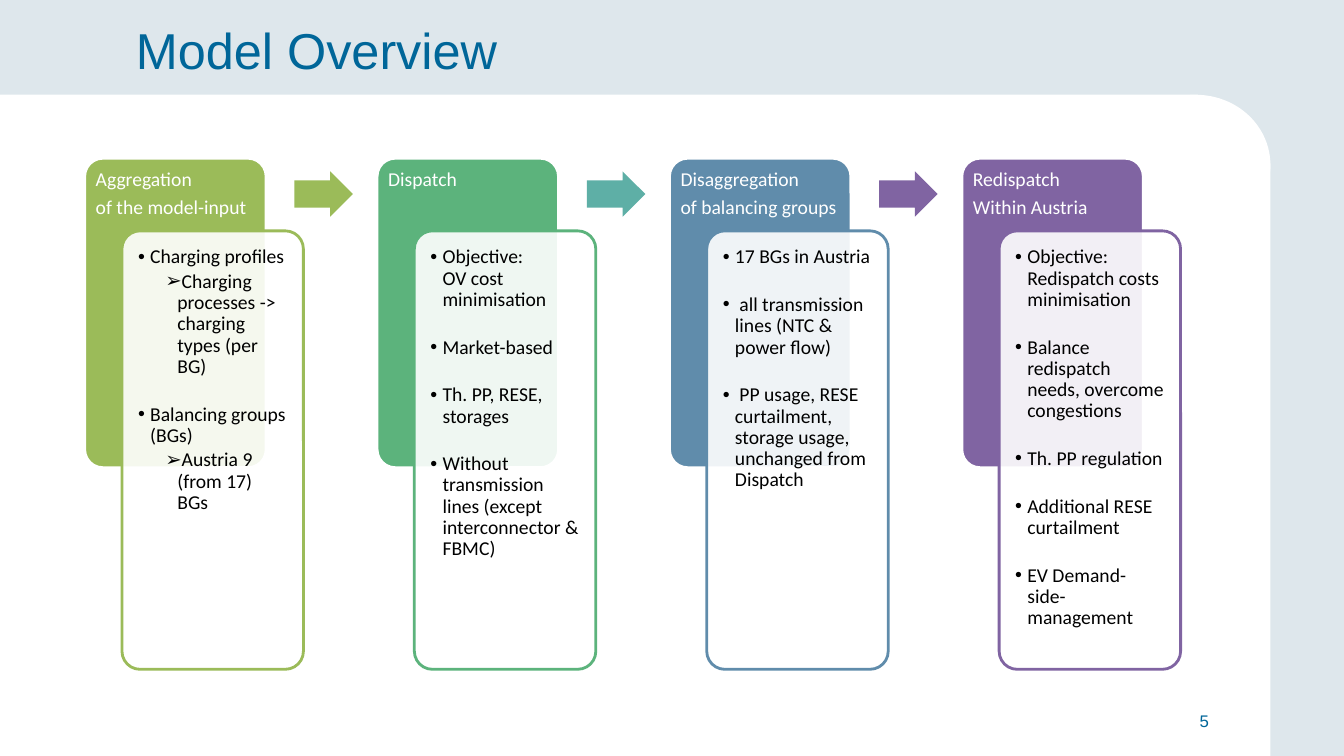
from dataclasses import dataclass

from lxml import etree
from pptx import Presentation
from pptx import util as u
from pptx.dml import color
from pptx.enum import shapes, text
from pptx.oxml import ns

HUES = {
    "back": "DEE7EC", "white": "FFFFFF", "black": "000000", "title": "006699",
    "lime": "9BBB59", "green": "5CB37C", "teal": "5EAFA6",
    "blue": "608CAB", "plum": "8064A2",
}
KIND = shapes.MSO_SHAPE
ALIGN = text.PP_ALIGN
ANCHOR = text.MSO_ANCHOR


@dataclass
class Para:
    words: str
    mark: str = ""
    left: float = 0
    gap: float = 0


@dataclass
class Step:
    hue: str
    head: list[str]
    items: list[str | list[str]]  # an inner list holds the points of the item before it
    arrow: str = ""


STEPS = [
    Step("lime", ["Aggregation", "of the model-input"],
         ["Charging profiles", ["Charging processes -> charging types (per BG)"],
          "Balancing groups (BGs)", ["Austria 9 (from 17) BGs"]], "lime"),
    Step("green", ["Dispatch"],
         ["Objective:\vOV cost minimisation", "Market-based", "Th. PP, RESE, storages",
          "Without transmission lines (except interconnector & FBMC)"], "teal"),
    Step("blue", ["Disaggregation", "of balancing groups"],
         ["17 BGs in Austria", " all transmission lines (NTC & power flow)",
          " PP usage, RESE curtailment, storage usage, unchanged from Dispatch"], "plum"),
    Step("plum", ["Redispatch", "Within Austria"],
         ["Objective: Redispatch costs minimisation",
          "Balance redispatch needs, overcome congestions", "Th. PP regulation",
          "Additional RESE curtailment", "EV Demand-side-management"]),
]
LEFT, TOP, PITCH = 0.84, 1.57, 2.9


def rgb(hue: str) -> color.RGBColor:
    return color.RGBColor.from_string(HUES[hue])


def inches(box: tuple) -> list[u.Length]:
    return [u.Inches(n) for n in box]


def draw(slide, kind: KIND, box: tuple, fill: str = "white", line: str = "",
         adjs: tuple = (), alpha: int = 100) -> None:
    shape = slide.shapes.add_shape(kind, *inches(box))
    shape.shadow.inherit = False
    for i, adj in enumerate(adjs):
        shape.adjustments[i] = adj
    shape.fill.solid()
    shape.fill.fore_color.rgb = rgb(fill)
    if alpha < 100:
        clr = shape.fill._xPr.find(".//" + ns.qn("a:srgbClr"))
        etree.SubElement(clr, ns.qn("a:alpha"), val=str(alpha * 1000))
    if line:
        shape.line.color.rgb = rgb(line)
        shape.line.width = u.Pt(2)
    else:
        shape.line.fill.background()


def write(slide, box: tuple, paras: list[Para], size: int = 14, font: str = "Calibri",
          hue: str = "black", align: ALIGN = ALIGN.LEFT, anchor: ANCHOR = ANCHOR.TOP,
          pad: tuple = (0.11, 0.11, 0.11, 0.11), space: float = 0.9) -> None:
    frame = slide.shapes.add_textbox(*inches(box)).text_frame
    frame.word_wrap = True
    frame.vertical_anchor = anchor
    (frame.margin_left, frame.margin_top,
     frame.margin_right, frame.margin_bottom) = inches(pad)
    for i, para in enumerate(paras):
        p = frame.add_paragraph() if i else frame.paragraphs[0]
        p.text = para.words
        if para.mark:
            props = p._p.get_or_add_pPr()
            props.set("marL", str(u.Inches(para.left)))
            props.set("indent", str(u.Inches(-0.12)))
            etree.SubElement(props, ns.qn("a:buFont"), typeface="Arial")
            etree.SubElement(props, ns.qn("a:buChar"), char=para.mark)
        p.alignment = align
        p.line_spacing = space
        if i:
            p.space_before = u.Pt(para.gap)
        for run in p.runs:
            run.font.size = u.Pt(size)
            run.font.name = font
            run.font.color.rgb = rgb(hue)


def bullets(items: list[str | list[str]]) -> list[Para]:
    paras = []
    for item in items:
        if isinstance(item, list):
            paras += [Para(sub, "➢", 0.39, 2.5) for sub in item]
        else:
            paras.append(Para(item, "•", 0.12, 19))
    return paras


def column(slide, step: Step, x: float) -> None:
    # Coloured head
    draw(slide, KIND.ROUNDED_RECTANGLE, (x, TOP, 1.8, 3.07), step.hue, "white", (0.1,))
    write(slide, (x, TOP, 1.8, 0.72), [Para(line, gap=4.9) for line in step.head],
          hue="white", pad=(0.11, 0.11, 0.11, 0.06))
    # Card with bullets
    draw(slide, KIND.ROUNDED_RECTANGLE, (x + 0.37, TOP + 0.72, 1.8, 4.35), "white",
         step.hue, (0.1,), 90)
    write(slide, (x + 0.42, TOP + 0.77, 1.7, 4.24), bullets(step.items))
    # Arrow to the next column
    if step.arrow:
        draw(slide, KIND.RIGHT_ARROW, (x + 2.08, TOP + 0.13, 0.58, 0.45), step.arrow,
             adjs=(0.6, 0.5))


def main() -> None:
    deck = Presentation()
    deck.slide_width, deck.slide_height = inches((13.33, 7.5))
    slide = deck.slides.add_slide(deck.slide_layouts[6])

    # Backdrop with one round corner
    slide.background.fill.solid()
    slide.background.fill.fore_color.rgb = rgb("back")
    draw(slide, KIND.RECTANGLE, (0, 0.94, 11.88, 6.56))
    draw(slide, KIND.OVAL, (11.12, 0.94, 1.48, 1.39))
    draw(slide, KIND.RECTANGLE, (7.14, 1.62, 5.46, 5.88))

    # Title and page number
    plain = dict(font="Arial", hue="title", anchor=ANCHOR.MIDDLE,
                 pad=(0.1, 0.05, 0.1, 0.05), space=1.0)
    write(slide, (1.25, 0.13, 10.83, 0.71), [Para("Model Overview")], size=36, **plain)
    write(slide, (9.56, 6.95, 2.53, 0.4), [Para("5")], size=12, align=ALIGN.RIGHT, **plain)

    # Process columns
    for i, step in enumerate(STEPS):
        column(slide, step, LEFT + i * PITCH)

    deck.save("out.pptx")


if __name__ == "__main__":
    main()
